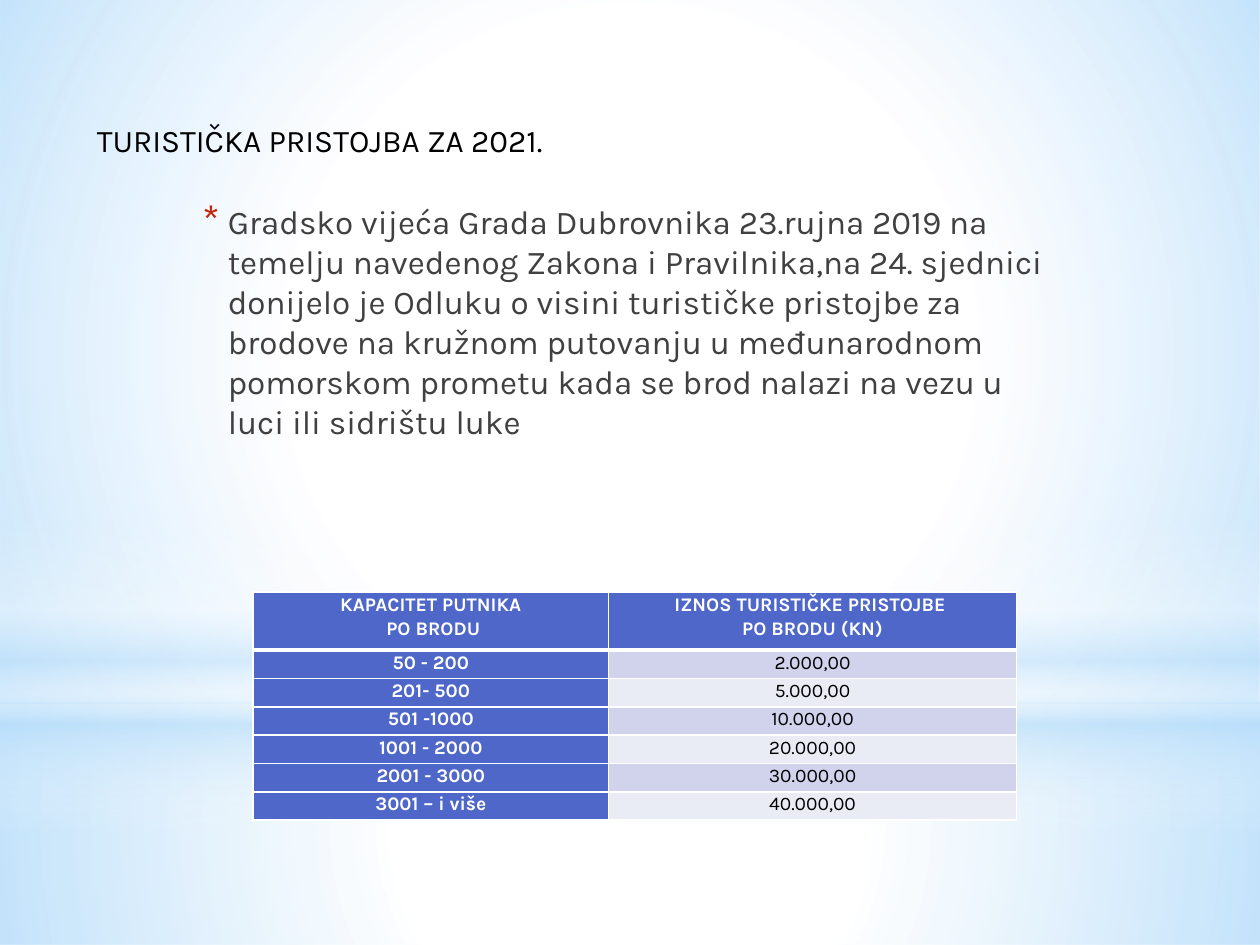
"""Build the slide on the 2021 tourist tax for cruise ships."""
from lxml.etree import SubElement
from pptx import Presentation
from pptx.dml.color import RGBColor
from pptx.enum.shapes import MSO_SHAPE
from pptx.enum.text import PP_ALIGN
from pptx.oxml import parse_xml
from pptx.oxml.ns import nsdecls, qn
from pptx.util import Inches, Pt


def color(value):
    return RGBColor.from_string(value)


def write(frame, text, size, ink, bold=False, align=PP_ALIGN.LEFT, line_spacing=None, bullet=""):
    for index, line in enumerate(text.split("\n")):
        paragraph = frame.paragraphs[0] if index == 0 else frame.add_paragraph()
        paragraph.alignment = align
        paragraph.line_spacing = line_spacing
        if bullet:
            properties = paragraph._p.get_or_add_pPr()
            properties.set("marL", str(Inches(0.25)))
            properties.set("indent", str(Inches(-0.2)))
            bullet_color = SubElement(properties, qn("a:buClr"))
            SubElement(bullet_color, qn("a:srgbClr"), val="C3260C")
            SubElement(properties, qn("a:buSzPct"), val="130000")
            SubElement(properties, qn("a:buFont"), typeface="Karla")
            SubElement(properties, qn("a:buChar"), char=bullet)
        run = paragraph.add_run()
        run.text = line
        run.font.name = "Karla"
        run.font.size = Pt(size)
        run.font.bold = bold
        run.font.color.rgb = color(ink)


presentation = Presentation()
presentation.slide_width = Inches(10)
presentation.slide_height = Inches(7.5)
slide = presentation.slides.add_slide(presentation.slide_layouts[6])
slide.background.fill.solid()
slide.background.fill.fore_color.rgb = color("FFFFFF")

RADIAL = '<a:path path="circle"><a:fillToRect l="50000" t="50000" r="50000" b="50000"/></a:path>'
VERTICAL = '<a:lin ang="5400000" scaled="0"/>'
WHITE, SKY = "FFFFFF", "B4DCFA"
glows = [
    (MSO_SHAPE.RECTANGLE, 5.58, 1.92, RADIAL, [(0, WHITE, 91), (37, WHITE, 76), (100, SKY, 79)]),
    (MSO_SHAPE.RECTANGLE, 0, 5.58, RADIAL, [(0, WHITE, 89), (48, WHITE, 62), (100, SKY, 79)]),
    (MSO_SHAPE.RECTANGLE, 4.12, 2.5, VERTICAL,
     [(0, WHITE, 0), (29, WHITE, 30), (45, SKY, 40), (55, WHITE, 26), (65, SKY, 60), (100, WHITE, 0)]),
    (MSO_SHAPE.OVAL, 1.75, 5.58, RADIAL, [(0, WHITE, 100), (56, WHITE, 0)]),
]
for kind, top, height, direction, stops in glows:
    shape = slide.shapes.add_shape(kind, 0, Inches(top), Inches(10), Inches(height))
    shape.shadow.inherit = False
    shape.line.fill.background()
    stop_list = "".join(
        f'<a:gs pos="{position * 1000}"><a:srgbClr val="{value}">'
        f'<a:alpha val="{opacity * 1000}"/></a:srgbClr></a:gs>'
        for position, value, opacity in stops
    )
    gradient = parse_xml(
        f'<a:gradFill {nsdecls("a")} rotWithShape="1"><a:gsLst>{stop_list}</a:gsLst>{direction}</a:gradFill>'
    )
    shape._element.spPr.find(qn("a:prstGeom")).addnext(gradient)

body = slide.shapes.add_textbox(Inches(1.46), Inches(1.55), Inches(7), Inches(2.91))
body.text_frame.word_wrap = True
write(
    body.text_frame,
    "Gradsko vijeća Grada Dubrovnika 23.rujna 2019 na temelju navedenog Zakona i Pravilnika,na 24. "
    "sjednici donijelo je Odluku o visini turističke pristojbe za brodove na kružnom putovanju u "
    "međunarodnom pomorskom prometu kada se brod nalazi na vezu u luci ili sidrištu luke",
    size=19, ink="404040", bullet="*",
)

title = slide.shapes.add_textbox(Inches(0.67), Inches(0.91), Inches(3.8), Inches(0.4))
title.text_frame.word_wrap = False
write(title.text_frame, "TURISTIČKA PRISTOJBA ZA 2021.", size=18, ink="000000")

rates = [
    ("KAPACITET PUTNIKA\n PO BRODU", "IZNOS TURISTIČKE PRISTOJBE \nPO BRODU (KN)"),
    ("50 - 200", "2.000,00"),
    ("201- 500", "5.000,00"),
    ("501 -1000", "10.000,00"),
    ("1001 - 2000", "20.000,00"),
    ("2001 - 3000", "30.000,00"),
    ("3001 – i više", "40.000,00"),
]
table = slide.shapes.add_table(
    len(rates), 2, Inches(2.01), Inches(4.7), Inches(6.06), Inches(1.81)
).table
table.columns[0].width = Inches(2.82)
table.columns[1].width = Inches(3.24)
for row_index, values in enumerate(rates):
    table.rows[row_index].height = Inches(0.46) if row_index == 0 else int(Inches(1.35) / 6)
    for column_index, value in enumerate(values):
        cell = table.cell(row_index, column_index)
        heading = row_index == 0 or column_index == 0
        band = "D0D3EB" if row_index % 2 else "E9EBF5"
        cell.margin_left = cell.margin_right = Inches(0.07)
        cell.margin_top = cell.margin_bottom = 0
        write(cell.text_frame, value, size=11, ink=WHITE if heading else "000000",
              bold=heading, align=PP_ALIGN.CENTER, line_spacing=1.07)
        properties = cell._tc.get_or_add_tcPr()
        for side in ("lnL", "lnR", "lnT", "lnB"):
            thick = (row_index, side) in ((0, "lnB"), (1, "lnT"))
            border = SubElement(properties, qn(f"a:{side}"), w=str(Pt(3 if thick else 1)))
            border_fill = SubElement(border, qn("a:solidFill"))
            SubElement(border_fill, qn("a:srgbClr"), val=WHITE)
        cell.fill.solid()
        cell.fill.fore_color.rgb = color("4E67C8" if heading else band)

presentation.save("out.pptx")
